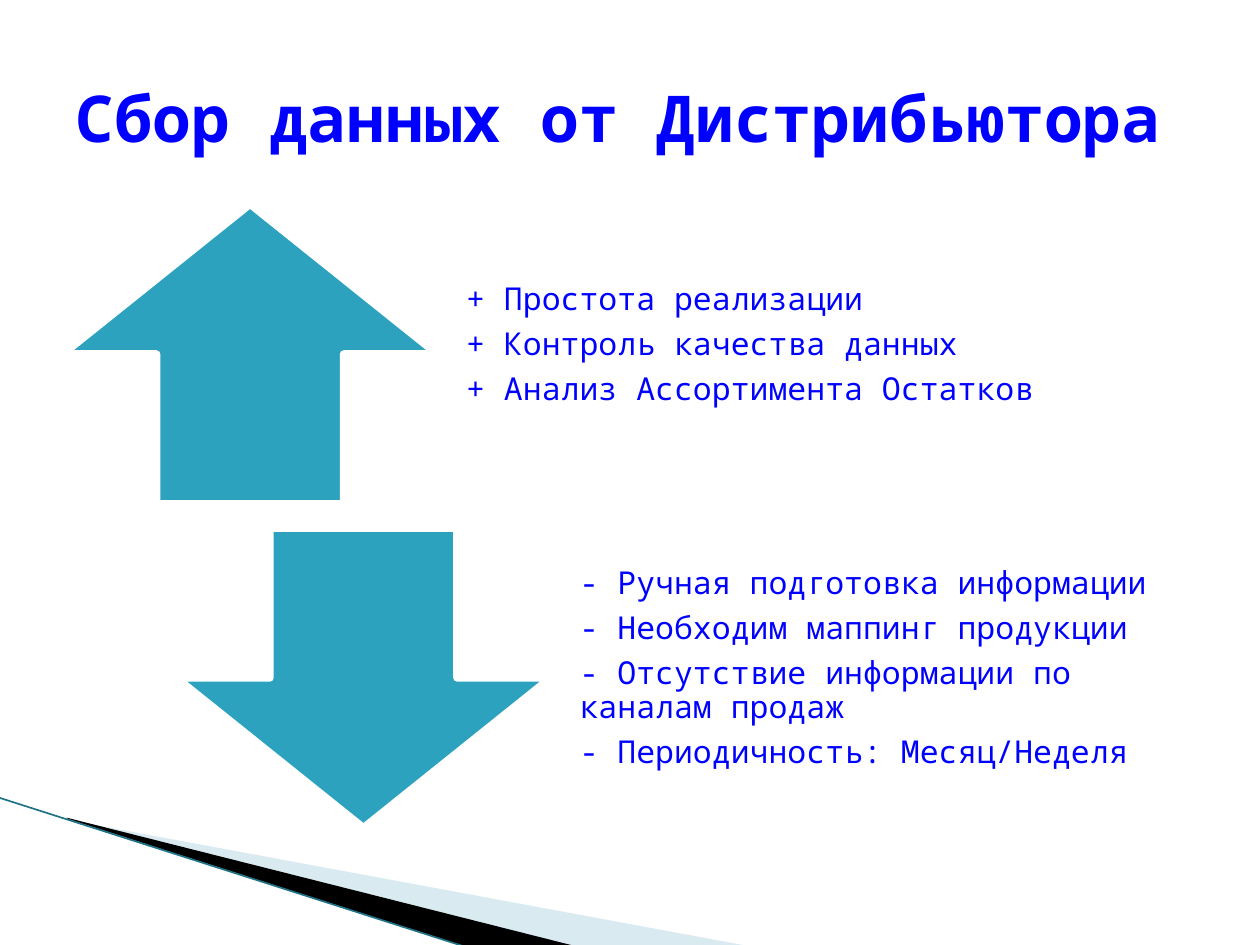
from dataclasses import dataclass

from lxml import etree
from pptx import Presentation
from pptx.dml.color import RGBColor
from pptx.enum.shapes import MSO_CONNECTOR, MSO_SHAPE
from pptx.enum.text import MSO_ANCHOR, PP_ALIGN
from pptx.oxml.ns import qn
from pptx.slide import Slide
from pptx.util import Inches, Pt

UP_ARROW = MSO_SHAPE.UP_ARROW
DOWN_ARROW = MSO_SHAPE.DOWN_ARROW
STRAIGHT = MSO_CONNECTOR.STRAIGHT
MIDDLE = MSO_ANCHOR.MIDDLE
LEFT = PP_ALIGN.LEFT

COLUMNS, ROWS = 100, 75
CELL = Inches(0.1)
ARROW_WIDTH, ARROW_HEIGHT = 29.7, 23.8
FIRST_LEFT, FIRST_TOP = 5, 16.2
STEP_RIGHT, STEP_DOWN = 9, 25.7
POINTS_OFFSET, POINTS_WIDTH = 30.6, 50.4


@dataclass(frozen=True)
class Theme:
    """Colours, font and type sizes of the slide."""

    text: str = "0000FF"
    arrow: str = "2DA2BF"
    outline: str = "FFFFFF"
    pale_wedge: str = "A0CBDC"
    dark_wedge: str = "000000"
    edge: str = "1F7386"
    font: str = "Noto Sans Mono"
    title_size: float = 36.9
    body_size: float = 18
    outline_width: float = 4.33
    edge_width: float = 0.95
    space_after: float = 6.3
    line_spacing: float = 0.9


@dataclass(frozen=True)
class Argument:
    """One side of the comparison: an arrow and its points."""

    arrow: MSO_SHAPE
    points: tuple[str, ...]


@dataclass(frozen=True)
class Wedge:
    """A corner wedge with corners in grid cells and opacity in percent."""

    corners: tuple[tuple[float, float], ...]
    color: str
    opacity: int = 100


THEME = Theme()
TITLE = "Сбор данных от Дистрибьютора"
ARGUMENTS = (
    Argument(UP_ARROW, (
        "+ Простота реализации",
        "+ Контроль качества данных",
        "+ Анализ Ассортимента Остатков",
    )),
    Argument(DOWN_ARROW, (
        "- Ручная подготовка информации",
        "- Необходим маппинг продукции",
        "- Отсутствие информации по каналам продаж",
        "- Периодичность: Месяц/Неделя",
    )),
)
WEDGES = (
    Wedge(((5.5, 65.1), (59.5, 75.1), (45.6, 75.1), (5.5, 65)), THEME.pale_wedge, 40),
    Wedge(((5.3, 64.9), (45.7, 75.1), (37.2, 75.2), (5.4, 65)), THEME.dark_wedge),
)
EDGE = (-0.1, 63.3, 37.1, 75.2)


def cells(*lengths: float) -> list[int]:
    """Convert grid cells to slide units."""
    return [round(length * CELL) for length in lengths]


def draw_wedge(slide: Slide, wedge: Wedge) -> None:
    """Draw a filled wedge without an outline."""
    start, *others = [tuple(cells(*corner)) for corner in wedge.corners]
    builder = slide.shapes.build_freeform(*start)
    builder.add_line_segments(others, close=True)
    shape = builder.convert_to_shape()
    shape.shadow.inherit = False
    shape.fill.solid()
    shape.fill.fore_color.rgb = RGBColor.from_string(wedge.color)
    shape.line.fill.background()
    if wedge.opacity < 100:
        color = shape.fill._xPr.find(qn("a:solidFill"))[0]
        etree.SubElement(color, qn("a:alpha"), val=str(wedge.opacity * 1000))


def draw_edge(slide: Slide) -> None:
    """Draw the thin line along the wedges."""
    edge = slide.shapes.add_connector(STRAIGHT, *cells(*EDGE))
    edge.line.color.rgb = RGBColor.from_string(THEME.edge)
    edge.line.width = Pt(THEME.edge_width)
    etree.SubElement(edge._element.spPr, qn("a:effectLst"))


def draw_text(slide: Slide, box: tuple[float, ...], lines: tuple[str, ...], size: float,
              insets: tuple[float, ...], bold: bool = False,
              line_spacing: float = 1.0, space_after: float = 0) -> None:
    """Draw left-aligned, vertically centred lines in a grid box."""
    frame = slide.shapes.add_textbox(*cells(*box)).text_frame
    frame.word_wrap = True
    frame.vertical_anchor = MIDDLE
    (frame.margin_left, frame.margin_top,
     frame.margin_right, frame.margin_bottom) = cells(*insets)
    frame.text = "\n".join(lines)
    for paragraph in frame.paragraphs:
        paragraph.alignment = LEFT
        paragraph.line_spacing = line_spacing
        paragraph.space_after = Pt(space_after)
        for run in paragraph.runs:
            run.font.name = THEME.font
            run.font.size = Pt(size)
            run.font.bold = bold
            run.font.color.rgb = RGBColor.from_string(THEME.text)


def draw_argument(slide: Slide, argument: Argument, index: int) -> None:
    """Draw an arrow with its points, stepping right and down by index."""
    left = FIRST_LEFT + index * STEP_RIGHT
    top = FIRST_TOP + index * STEP_DOWN
    arrow = slide.shapes.add_shape(
        argument.arrow, *cells(left, top, ARROW_WIDTH, ARROW_HEIGHT))
    arrow.shadow.inherit = False
    arrow.fill.solid()
    arrow.fill.fore_color.rgb = RGBColor.from_string(THEME.arrow)
    arrow.line.color.rgb = RGBColor.from_string(THEME.outline)
    arrow.line.width = Pt(THEME.outline_width)
    draw_text(slide, (left + POINTS_OFFSET, top, POINTS_WIDTH, ARROW_HEIGHT),
              argument.points, THEME.body_size, (1.4, 0, 1.4, 1.4),
              line_spacing=THEME.line_spacing, space_after=THEME.space_after)


def main() -> None:
    """Build and save the slide."""
    deck = Presentation()
    deck.slide_width, deck.slide_height = cells(COLUMNS, ROWS)
    slide = deck.slides.add_slide(deck.slide_layouts[6])
    for wedge in WEDGES:
        draw_wedge(slide, wedge)
    draw_edge(slide)
    for index, argument in enumerate(ARGUMENTS):
        draw_argument(slide, argument, index)
    draw_text(slide, (5, 3, 90, 12.5), (TITLE,), THEME.title_size,
              (1, 0.5, 1, 0.5), bold=True)
    deck.save("out.pptx")


if __name__ == "__main__":
    main()
